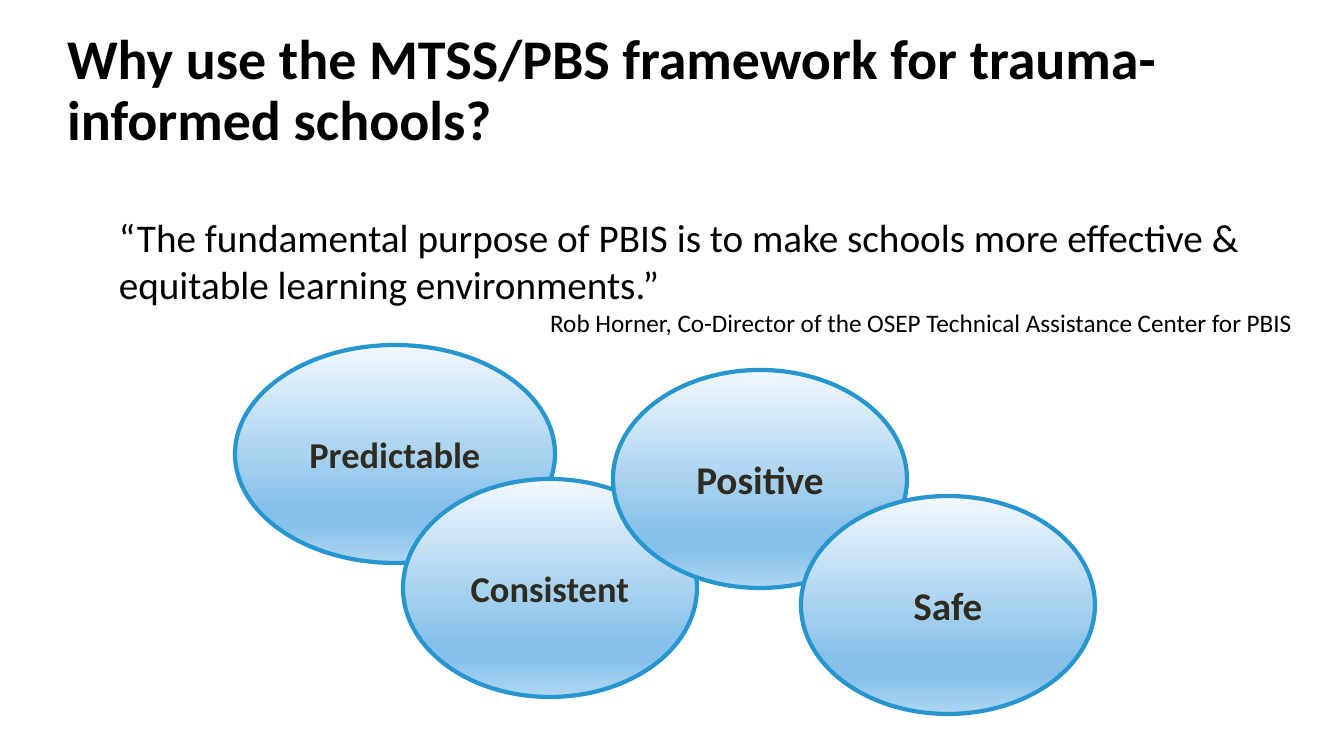
from dataclasses import dataclass

from lxml import etree
from pptx import Presentation
from pptx.dml.color import RGBColor
from pptx.enum.shapes import MSO_SHAPE
from pptx.enum.text import MSO_ANCHOR, MSO_AUTO_SIZE, PP_ALIGN
from pptx.oxml.ns import qn
from pptx.util import Emu, Pt

ELLIPSE = MSO_SHAPE.OVAL
MIDDLE = MSO_ANCHOR.MIDDLE
NO_AUTOFIT = MSO_AUTO_SIZE.NONE
LEFT, CENTER, RIGHT = PP_ALIGN.LEFT, PP_ALIGN.CENTER, PP_ALIGN.RIGHT


@dataclass(frozen=True)
class Theme:
    font: str = "Calibri"
    text: str = "000000"
    label: str = "2F2B20"
    outline: str = "2795CE"
    gradient: tuple = ((0, "F2F8FD"), (74, "87C1EA"), (83, "87C1EA"), (100, "AFD6F1"))
    title_size: int = 40
    quote_size: int = 28
    source_size: int = 18
    small_label: int = 26
    large_label: int = 28


theme = Theme()


def px(*lengths):
    return [Emu(round(length * 914400 / 100.8)) for length in lengths]


def add_run(paragraph, text, size, color, align, bold=False):
    paragraph.alignment = align
    run = paragraph.add_run()
    run.text = text
    run.font.name = theme.font
    run.font.size = Pt(size)
    run.font.bold = bold
    run.font.color.rgb = RGBColor.from_string(color)


presentation = Presentation()
presentation.slide_width, presentation.slide_height = px(1344, 756)
slide = presentation.slides.add_slide(presentation.slide_layouts[5])

# Title
title = slide.shapes.title
title.left, title.top, title.width, title.height = px(57, 26, 1223, 132)
title.text_frame.auto_size = NO_AUTOFIT
title.text_frame.vertical_anchor = MIDDLE
paragraph = title.text_frame.paragraphs[0]
paragraph.line_spacing = 0.9
add_run(paragraph, "Why use the MTSS/PBS framework for trauma-informed schools?",
        theme.title_size, theme.text, LEFT, bold=True)

# Quotation and its source
quote = slide.shapes.add_textbox(*px(109, 208, 1193, 166)).text_frame
quote.word_wrap = True
add_run(quote.paragraphs[0],
        "“The fundamental purpose of PBIS is to make schools more effective & "
        "equitable learning environments.”",
        theme.quote_size, theme.text, LEFT)
add_run(quote.add_paragraph(),
        "Rob Horner, Co-Director of the OSEP Technical Assistance Center for PBIS",
        theme.source_size, theme.text, RIGHT)

# Overlapping qualities, from back to front
qualities = [
    ("Predictable", 235, 345, 320, theme.small_label),
    ("Consistent", 403, 479, 294, theme.small_label),
    ("Positive", 613, 370, 294, theme.large_label),
    ("Safe", 801, 496, 294, theme.large_label),
]
for label, left, top, width, size in qualities:
    ellipse = slide.shapes.add_shape(ELLIPSE, *px(left, top, width, 218))
    ellipse.shadow.inherit = False
    ellipse.line.color.rgb = RGBColor.from_string(theme.outline)
    ellipse.line.width = Pt(3)

    # Four-stop gradient running downwards
    ellipse.fill.gradient()
    ellipse.fill.gradient_angle = 270
    stops = ellipse._element.spPr.find(qn("a:gradFill")).find(qn("a:gsLst"))
    for stop in list(stops):
        stops.remove(stop)
    for percent, color in theme.gradient:
        stop = etree.SubElement(stops, qn("a:gs"), pos=str(percent * 1000))
        etree.SubElement(stop, qn("a:srgbClr"), val=color)

    ellipse.text_frame.vertical_anchor = MIDDLE
    add_run(ellipse.text_frame.paragraphs[0], label, size, theme.label, CENTER, bold=True)

presentation.save("out.pptx")
